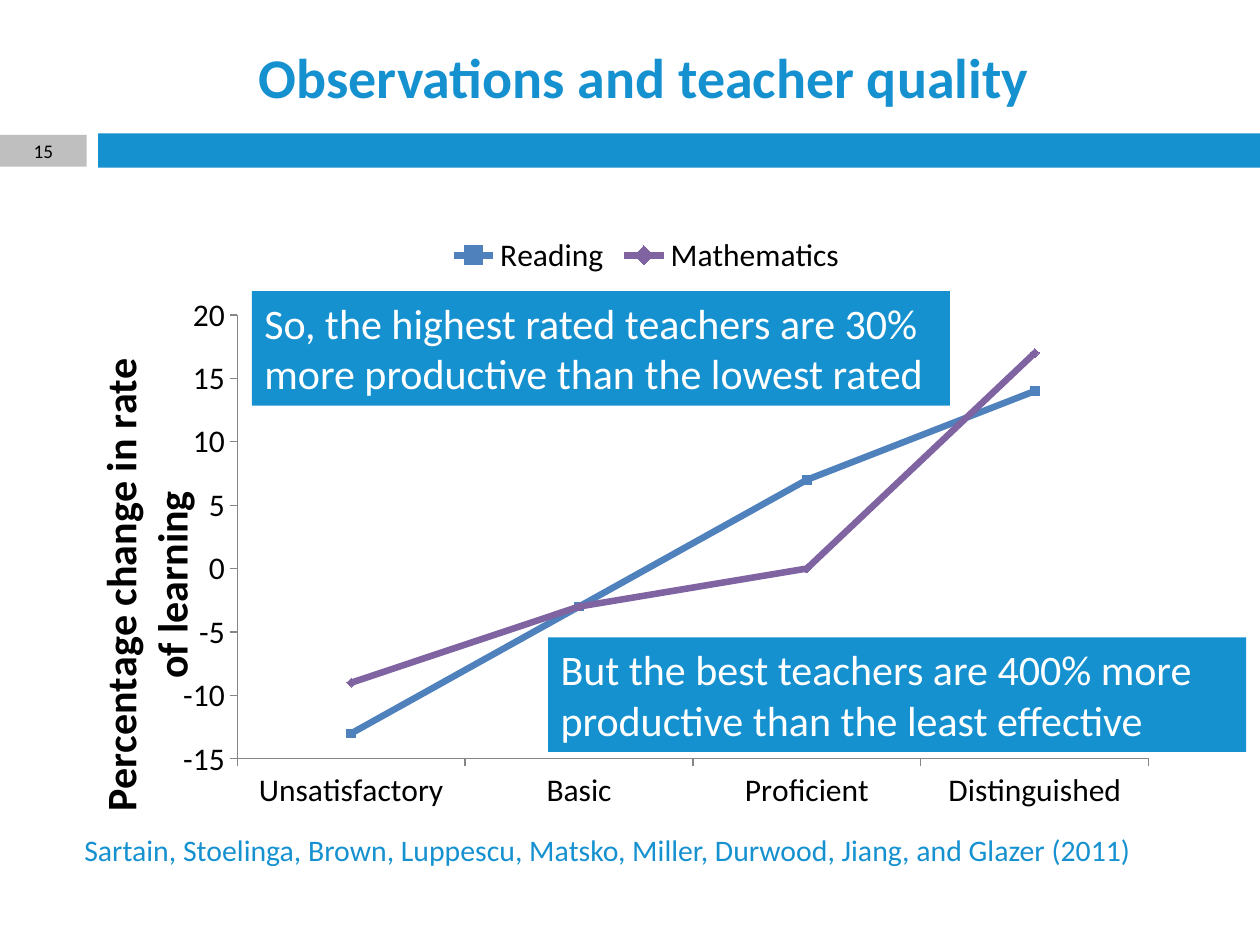
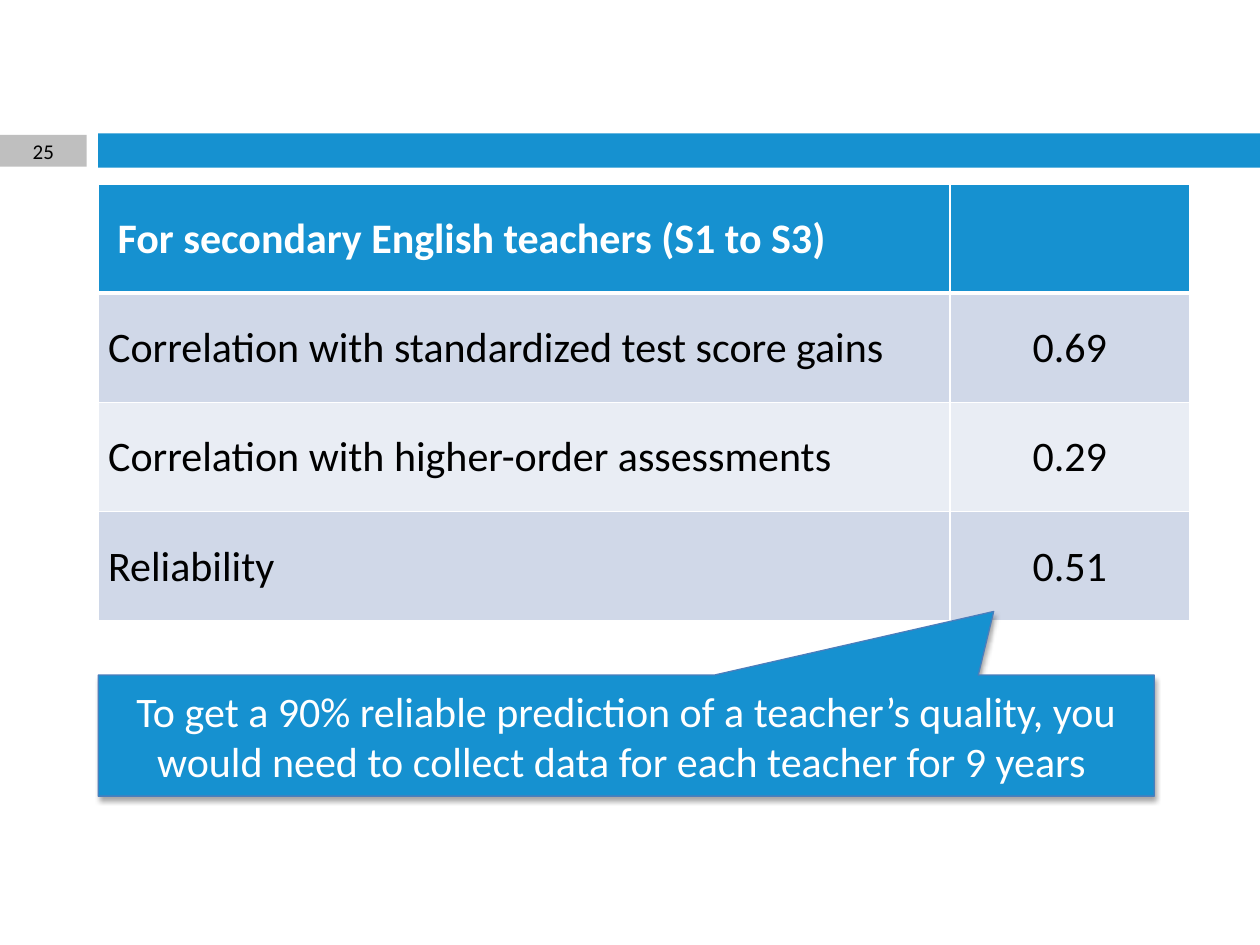
from lxml import etree
from pptx import Presentation
from pptx import util as u
from pptx.chart.data import CategoryChartData
from pptx.dml.color import RGBColor
from pptx.enum import chart as charts, shapes, text
from pptx.oxml import parse_xml
from pptx.oxml.ns import nsdecls, qn

COLORS = {name: RGBColor.from_string(value) for name, value in {
    "blue": "1691D0", "grey": "BFBFBF", "white": "FFFFFF", "black": "000000",
    "axis": "868686", "reading": "4F81BD", "mathematics": "8064A2",
    "outline": "4B7EBC", "row_dark": "D0D8E8", "row_light": "E9EDF4"}.items()}
FONT = "Calibri"
MARGIN = u.Cm(1.98)
CONTENT_WIDTH = u.Cm(22)
BAND_TOP = u.Cm(2.72)
NUMBER_WIDTH, NUMBER_HEIGHT = u.Cm(1.75), u.Cm(0.64)


def write(frame, words, size, color, bold=False, align=text.PP_ALIGN.LEFT):
    """Put one formatted paragraph in a text frame."""
    frame.word_wrap = True
    para = frame.paragraphs[0]
    para.text = words
    para.alignment = align
    para.font.name, para.font.size, para.font.bold = FONT, u.Pt(size), bold
    para.font.color.rgb = COLORS[color]


def place(parent, index, **values):
    """Give a chart part a manual layout."""
    for old in parent.findall(qn("c:layout")):
        parent.remove(old)
    layout = parse_xml(f"<c:layout {nsdecls('c')}><c:manualLayout/></c:layout>")
    for tag, value in values.items():
        etree.SubElement(layout[0], qn("c:" + tag)).set("val", str(value))
    parent.insert(index, layout)


deck = Presentation()
deck.slide_width, deck.slide_height = u.Cm(25.4), u.Cm(19.05)
layout = deck.slide_layouts.get_by_name("Title Only")
chart_page, table_page = [deck.slides.add_slide(layout) for _ in range(2)]

# Shared bands, kept on the layout
for left, top, width, height, color in [
        (MARGIN, u.Cm(2.69), deck.slide_width - MARGIN, u.Cm(0.69), "blue"),
        (0, BAND_TOP, NUMBER_WIDTH, NUMBER_HEIGHT, "grey")]:
    band = chart_page.shapes.add_shape(
        shapes.MSO_SHAPE.RECTANGLE, left, top, width, height)
    band.shadow.inherit = False
    band.fill.solid()
    band.fill.fore_color.rgb = COLORS[color]
    band.line.fill.background()
    layout.shapes.element.insert(2, band.element)

# Page numbers
for page, number, size in [(chart_page, "15", 11), (table_page, "25", 12)]:
    box = page.shapes.add_textbox(0, BAND_TOP, NUMBER_WIDTH, NUMBER_HEIGHT)
    box.text_frame.vertical_anchor = text.MSO_ANCHOR.MIDDLE
    write(box.text_frame, number, size, "black", align=text.PP_ALIGN.CENTER)

# Slide 1: title
title = chart_page.shapes.title
title.left, title.top = MARGIN, u.Cm(0.66)
title.width, title.height = CONTENT_WIDTH, u.Cm(1.73)
title.text_frame.vertical_anchor = text.MSO_ANCHOR.MIDDLE
write(title.text_frame, "Observations and teacher quality", 32, "blue",
      bold=True, align=text.PP_ALIGN.CENTER)

# Slide 1: line chart
data = CategoryChartData(number_format="0")
data.categories = ["Unsatisfactory", "Basic", "Proficient", "Distinguished"]
data.add_series("Reading", [-13, -3, 7, 14])
data.add_series("Mathematics", [-9, -3, 0, 17])
chart = chart_page.shapes.add_chart(
    charts.XL_CHART_TYPE.LINE_MARKERS, u.Cm(1.7), u.Cm(4.45),
    u.Cm(22.66), u.Cm(12.5), data).chart
chart.has_title = False
chart.font.name, chart.font.size = FONT, u.Pt(18)
chart.font.color.rgb = COLORS["black"]
chart.has_legend = True
chart.legend.position = charts.XL_LEGEND_POSITION.TOP
chart.legend.include_in_layout = False
place(chart.element.find(".//" + qn("c:plotArea")), 0, layoutTarget="inner",
      xMode="edge", yMode="edge", x=0.136, y=0.152, w=0.811, h=0.716)

chart.plots[0].vary_by_categories = False
markers = [charts.XL_MARKER_STYLE.SQUARE, charts.XL_MARKER_STYLE.DIAMOND]
for series, marker in zip(chart.plots[0].series, markers):
    color = COLORS[series.name.lower()]
    series.smooth = False
    series.format.line.color.rgb = color
    series.format.line.width = u.Pt(3.75)
    series.marker.style, series.marker.size = marker, 5
    series.marker.format.fill.solid()
    series.marker.format.fill.fore_color.rgb = color
    series.marker.format.line.color.rgb = color

for axis in (chart.category_axis, chart.value_axis):
    axis.has_major_gridlines = False
    axis.major_tick_mark = charts.XL_TICK_MARK.OUTSIDE
    axis.tick_label_position = charts.XL_TICK_LABEL_POSITION.LOW
    axis.format.line.color.rgb = COLORS["axis"]
rate_axis = chart.value_axis
rate_axis.minimum_scale, rate_axis.maximum_scale = -15, 20
rate_axis.major_unit = 5
rate_axis.crosses = charts.XL_AXIS_CROSSES.MINIMUM
rate_axis.tick_labels.number_format = "0"
rate_axis.tick_labels.number_format_is_linked = False
write(rate_axis.axis_title.text_frame, "Percentage change in rate of learning",
      24, "black", bold=True, align=text.PP_ALIGN.CENTER)
place(rate_axis.axis_title.element, 1, xMode="edge", yMode="edge", x=0, y=0.21)

# Slide 1: source line and findings
source = chart_page.shapes.add_textbox(
    u.Cm(1.45), u.Cm(16.64), u.Cm(22.91), u.Cm(0.99))
write(source.text_frame, "Sartain, Stoelinga, Brown, Luppescu, Matsko, Miller, "
      "Durwood, Jiang, and Glazer (2011)", 17, "blue")
for left, top, words in [
        (5.08, 5.87, "So, the highest rated teachers are 30% "
                     "more productive than the lowest rated"),
        (11.05, 12.85, "But the best teachers are 400% more "
                       "productive than the least effective")]:
    finding = chart_page.shapes.add_textbox(
        u.Cm(left), u.Cm(top), u.Cm(14.07), u.Cm(2.31))
    finding.fill.solid()
    finding.fill.fore_color.rgb = COLORS["blue"]
    write(finding.text_frame, words, 24, "white")

# Slide 2: table
unused_title = table_page.shapes.title.element
unused_title.getparent().remove(unused_title)
rows = [("For secondary English teachers (S1 to S3)", ""),
        ("Correlation with standardized test score gains", "0.69"),
        ("Correlation with higher-order assessments", "0.29"),
        ("Reliability", "0.51")]
row_fills = ["blue", "row_dark", "row_light", "row_dark"]
table = table_page.shapes.add_table(
    len(rows), 2, MARGIN, u.Cm(3.71), CONTENT_WIDTH, u.Cm(8.8)).table
table.columns[0].width, table.columns[1].width = u.Cm(17.17), u.Cm(4.83)
for r, row in enumerate(rows):
    table.rows[r].height = u.Cm(2.2)
    for c, words in enumerate(row):
        cell = table.cell(r, c)
        cell.margin_left = u.Cm(0.03 if c else 0.2 if r else 0.39)
        cell.margin_right = cell.margin_top = u.Cm(0.03)
        cell.margin_bottom = 0
        cell.vertical_anchor = text.MSO_ANCHOR.MIDDLE
        cell.fill.solid()
        cell.fill.fore_color.rgb = COLORS[row_fills[r]]
        write(cell.text_frame, words, 24, "black" if r else "white", bold=r == 0,
              align=text.PP_ALIGN.CENTER if c else text.PP_ALIGN.LEFT)
        # White borders, thicker under the header
        thick_side = {0: "lnB", 1: "lnT"}.get(r)
        for i, side in enumerate(("lnL", "lnR", "lnT", "lnB")):
            width = u.Pt(3 if side == thick_side else 1)
            cell._tc.get_or_add_tcPr().insert(i, parse_xml(
                f'<a:{side} {nsdecls("a")} w="{width}"><a:solidFill>'
                f'<a:srgbClr val="{COLORS["white"]}"/></a:solidFill></a:{side}>'))

# Slide 2: callout with a soft shadow
callout = table_page.shapes.add_shape(
    shapes.MSO_SHAPE.RECTANGULAR_CALLOUT, MARGIN, u.Cm(13.61),
    u.Cm(21.29), u.Cm(2.44))
callout.adjustments[0], callout.adjustments[1] = 0.348, -1.026
callout.fill.solid()
callout.fill.fore_color.rgb = COLORS["blue"]
callout.line.color.rgb = COLORS["outline"]
callout.line.width = u.Pt(0.75)
callout.shadow.inherit = False
callout.element.spPr.find(qn("a:effectLst")).append(parse_xml(
    f'<a:outerShdw {nsdecls("a")} blurRad="{u.Pt(3.1)}" dist="{u.Pt(1.8)}" '
    f'dir="5400000" rotWithShape="0"><a:srgbClr val="{COLORS["black"]}">'
    '<a:alpha val="35000"/></a:srgbClr></a:outerShdw>'))
callout.text_frame.vertical_anchor = text.MSO_ANCHOR.MIDDLE
write(callout.text_frame, "To get a 90% reliable prediction of a teacher’s quality, "
      "you would need to collect data for each teacher for 9 years ",
      24, "white", align=text.PP_ALIGN.CENTER)

deck.save("out.pptx")
